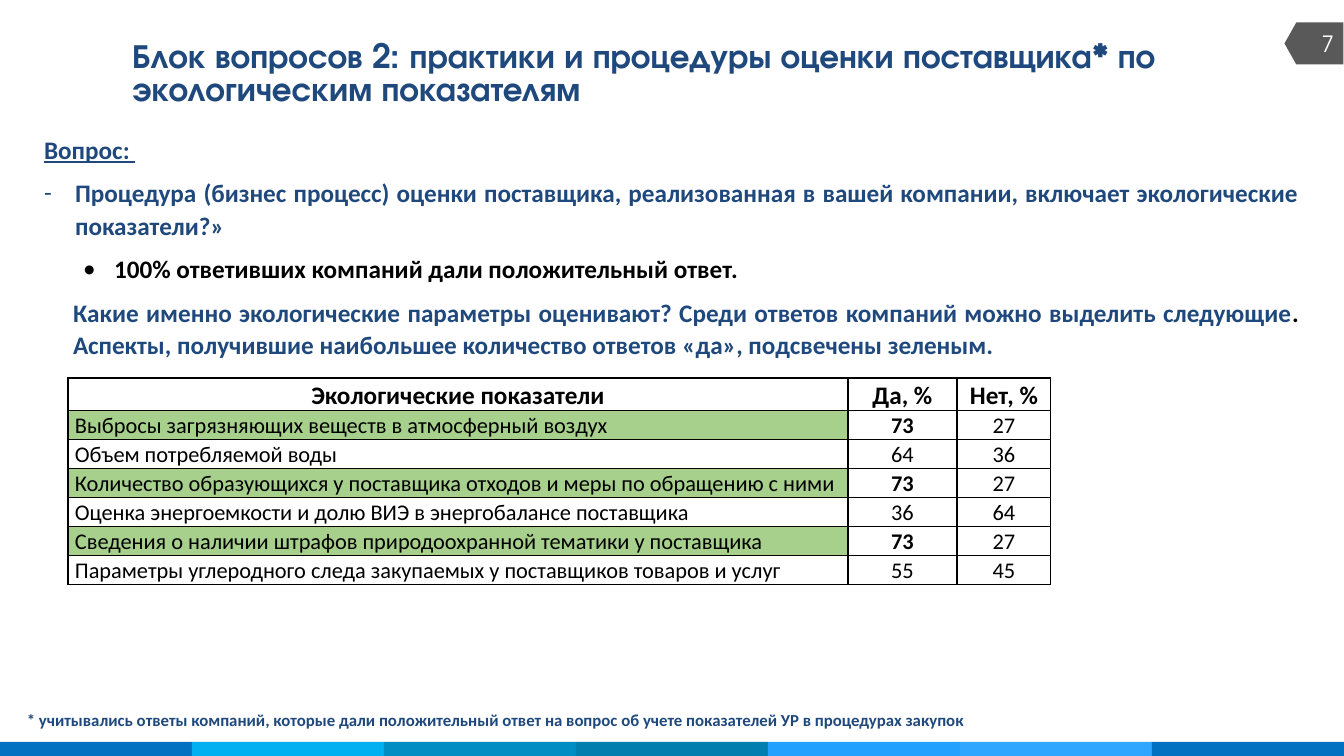
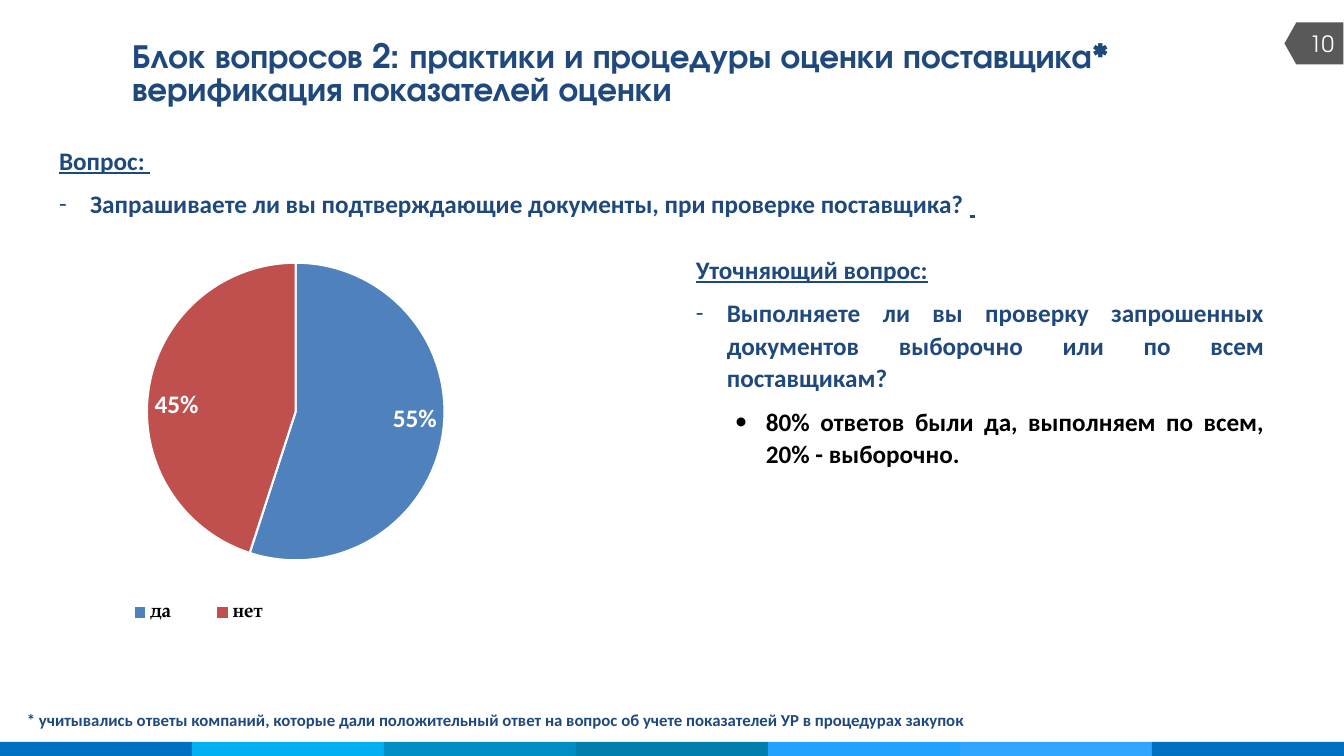
"""Build two survey slides on how suppliers are assessed."""
from lxml import etree
from pptx import Presentation
from pptx import util as u
from pptx.chart.data import CategoryChartData
from pptx.dml.color import RGBColor
from pptx.enum import chart as charts, shapes, text
from pptx.oxml import parse_xml
from pptx.oxml.ns import nsdecls, qn

NAVY = RGBColor(0x1F, 0x49, 0x7D)
BLACK = RGBColor(0, 0, 0)
WHITE = RGBColor(255, 255, 255)
GRAY = RGBColor(0x59, 0x59, 0x59)
GREEN = RGBColor(0xA8, 0xD0, 0x8D)
BLUE = RGBColor(0x4F, 0x81, 0xBD)
RED = RGBColor(0xC0, 0x50, 0x4D)
BANDS = [RGBColor.from_string(code) for code in (
    "0070C0", "00B0F0", "008DC3", "007EAE", "23A1FF", "2FA6FF", "0070C0")]
SANS, GEO, SERIF = "Calibri", "TeX Gyre Adventor", "TeX Gyre Pagella"
WIDE, HIGH = 1344, 756
SCALE = 12192000 / WIDE

HEAD = (0, 0, None)
DASH = (31, -31, "-")
DOT = (70, -31, "•")
PLAIN = (29, 0, None)


def px(*sizes):
    """Turn px lengths into EMU."""
    return [u.Emu(round(size * SCALE)) for size in sizes]


def write(frame, rows, size=18):
    """Fill a frame with (style, run, run...) rows."""
    frame.word_wrap = True
    frame.auto_size = text.MSO_AUTO_SIZE.NONE
    frame.vertical_anchor = text.MSO_ANCHOR.TOP
    for i, ((left, first, mark), *runs) in enumerate(rows):
        para = frame.add_paragraph() if i else frame.paragraphs[0]
        props = para._p.get_or_add_pPr()
        margin, indent = px(left, first)
        props.set("marL", str(margin))
        props.set("indent", str(indent))
        if mark:
            etree.SubElement(props, qn("a:buFont"), typeface=SANS)
            etree.SubElement(props, qn("a:buChar"), char=mark)
        else:
            etree.SubElement(props, qn("a:buNone"))
        para.alignment = text.PP_ALIGN.JUSTIFY
        para.line_spacing = 1.07
        para.space_before, para.space_after = u.Pt(0), u.Pt(8)
        for words, colour, under in runs:
            run = para.add_run()
            run.text = words
            font = run.font
            font.name, font.size, font.bold = SANS, u.Pt(size), True
            font.underline = under
            font.color.rgb = colour


deck = Presentation()
deck.slide_width, deck.slide_height = px(WIDE, HIGH)
layout = deck.slide_layouts[1]
head = layout.placeholders[0]
head.left, head.top, head.width, head.height = px(122, 38, 1101, 52)

pages = [
    ("7", "Блок вопросов 2: практики и процедуры оценки поставщика* "
     "по экологическим показателям", (34, 127, 1275, 245), [
         (HEAD, ("Вопрос: ", NAVY, True)),
         (DASH, ("Процедура (бизнес процесс) оценки поставщика, реализованная "
                 "в вашей компании, включает экологические показатели?»",
                 NAVY, False)),
         (DOT, ("100% ответивших компаний дали положительный ответ.",
                BLACK, False)),
         (PLAIN, ("Какие именно экологические параметры оценивают? Среди "
                  "ответов компаний можно выделить следующие", NAVY, False),
          (". ", BLACK, False),
          ("Аспекты, получившие наибольшее количество ответов «да», "
           "подсвечены зеленым.", NAVY, False))]),
    ("10", "Блок вопросов 2: практики и процедуры оценки поставщика* "
     "верификация показателей оценки", (49, 138, 1275, 95), [
         (HEAD, ("Вопрос: ", NAVY, True)),
         (DASH, ("Запрашиваете ли вы подтверждающие документы, "
                 "при проверке поставщика? ", NAVY, False),
          (" ", NAVY, True))]),
]
note = ("* учитывались ответы компаний, которые дали положительный ответ на "
        "вопрос об учете показателей УР в процедурах закупок")

slides = [deck.slides.add_slide(layout) for page in pages]

step = WIDE // len(BANDS)
parts = [(shapes.MSO_SHAPE.RECTANGLE, (i * step, 742, step, 14), tone, 0)
         for i, tone in enumerate(BANDS)]
parts.append((shapes.MSO_SHAPE.FLOWCHART_OFFPAGE_CONNECTOR,
              (1293, 14, 42, 59), GRAY, 90))
for kind, area, tone, turn in parts:
    part = slides[0].shapes.add_shape(kind, *px(*area))
    part.rotation = turn
    part.shadow.inherit = False
    part.fill.solid()
    part.fill.fore_color.rgb = tone
    part.line.fill.background()
    layout.shapes.element.append(part.element)

for slide, (number, title, area, rows) in zip(slides, pages):
    frame = slide.shapes.title.text_frame
    frame.text = title
    frame.word_wrap = True
    frame.auto_size = text.MSO_AUTO_SIZE.NONE
    frame.vertical_anchor = text.MSO_ANCHOR.TOP
    para = frame.paragraphs[0]
    para.alignment, para.line_spacing = text.PP_ALIGN.LEFT, 0.8
    font = para.runs[0].font
    font.name, font.size, font.bold = GEO, u.Pt(24), True
    font.color.rgb = NAVY

    body = slide.placeholders[1]
    body.left, body.top, body.width, body.height = px(*area)
    write(body.text_frame, rows)

    foot = slide.shapes.add_textbox(*px(17, 703, 1085, 31))
    write(foot.text_frame, [(HEAD, (note, NAVY, False))], 12)

    frame = slide.shapes.add_textbox(*px(1285, 24, 59, 40)).text_frame
    frame.text = number
    frame.word_wrap = True
    frame.vertical_anchor = text.MSO_ANCHOR.MIDDLE
    para = frame.paragraphs[0]
    para.alignment = text.PP_ALIGN.RIGHT
    font = para.runs[0].font
    font.name, font.size = GEO, u.Pt(16)
    font.color.rgb = WHITE

answers = [
    ("Выбросы загрязняющих веществ в атмосферный воздух", 73),
    ("Объем потребляемой воды", 64),
    ("Количество образующихся у поставщика отходов и меры по обращению с ними",
     73),
    ("Оценка энергоемкости и долю ВИЭ в энергобалансе поставщика", 36),
    ("Сведения о наличии штрафов природоохранной тематики у поставщика", 73),
    ("Параметры углеродного следа закупаемых у поставщиков товаров и услуг",
     55),
]
top = max(yes for label, yes in answers)
grid = [("Экологические показатели", "Да, %", "Нет, %")]
grid += [(label, str(yes), str(100 - yes)) for label, yes in answers]
widths = (780, 109, 94)
heights = [32] + [29] * len(answers)
table = slides[0].shapes.add_table(
    len(grid), len(widths),
    *px(68, 378, sum(widths), sum(heights))).table
table.first_row = table.horz_banding = False
for column, width in zip(table.columns, px(*widths)):
    column.width = width
for r, (line, height) in enumerate(zip(grid, px(*heights))):
    table.rows[r].height = height
    best = r > 0 and line[1] == str(top)
    for c, words in enumerate(line):
        cell = table.cell(r, c)
        cell.text = words
        cell.margin_left, cell.margin_right = px(7, 7)
        cell.margin_top = cell.margin_bottom = 0
        para = cell.text_frame.paragraphs[0]
        para.line_spacing = 1.07
        para.alignment = (text.PP_ALIGN.LEFT if r and not c
                          else text.PP_ALIGN.CENTER)
        font = para.runs[0].font
        font.name, font.size = SANS, u.Pt(16 if r else 18)
        font.bold = r == 0 or (best and c == 1)
        font.color.rgb = BLACK
        props = cell._tc.get_or_add_tcPr()
        for side in ("lnL", "lnR", "lnT", "lnB"):
            edge = etree.SubElement(props, qn("a:" + side), w="12700")
            fill = etree.SubElement(edge, qn("a:solidFill"))
            etree.SubElement(fill, qn("a:srgbClr"), val=str(BLACK))
        if best and c == 0:
            cell.fill.solid()
            cell.fill.fore_color.rgb = GREEN
        else:
            cell.fill.background()

data = CategoryChartData(number_format="0%")
data.categories = ["да", "нет"]
data.add_series("Series 1", (0.55, 0.45))
chart = slides[1].shapes.add_chart(
    charts.XL_CHART_TYPE.PIE, *px(24, 246, 647, 414), data).chart
chart.has_title = False
chart.has_legend = True
legend = chart.legend
legend.position = charts.XL_LEGEND_POSITION.BOTTOM
legend.include_in_layout = False
plot = chart.plots[0]
plot.vary_by_categories = True
plot.has_data_labels = True
labels = plot.data_labels
labels.show_value, labels.show_percentage = True, False
labels.number_format, labels.number_format_is_linked = "0%", False
labels.position = charts.XL_LABEL_POSITION.INSIDE_END
for font, name, size, tone in ((chart.font, SANS, 18, BLACK),
                               (legend.font, SERIF, 14, BLACK),
                               (labels.font, SANS, 18, WHITE)):
    font.name, font.size, font.bold = name, u.Pt(size), True
    font.color.rgb = tone
for i, tone in enumerate((BLUE, RED)):
    style = plot.series[0].points[i].format
    style.fill.solid()
    style.fill.fore_color.rgb = tone
    style.line.color.rgb = WHITE
    style.line.width = u.Pt(1.5)

for tag, spot, target, place in (
        ("c:plotArea", 0, '<c:layoutTarget val="inner"/>',
         (0.19, 0.04, 0.46, 0.72)),
        ("c:legend", 1, "", (0.11, 0.85, 0.32, 0.07))):
    owner = chart.element.find(".//" + qn(tag))
    for old in owner.findall(qn("c:layout")):
        owner.remove(old)
    modes = '<c:xMode val="edge"/><c:yMode val="edge"/>'
    sizes = "".join(f'<c:{key} val="{val}"/>' for key, val in zip("xywh", place))
    owner.insert(spot, parse_xml(
        f'<c:layout {nsdecls("c")}><c:manualLayout>{target}{modes}{sizes}'
        '</c:manualLayout></c:layout>'))

side = slides[1].shapes.add_textbox(*px(686, 247, 588, 228))
write(side.text_frame, [
    (HEAD, ("Уточняющий вопрос:", NAVY, True)),
    (DASH, ("Выполняете ли вы проверку запрошенных документов выборочно "
            "или по всем поставщикам?", NAVY, False)),
    (DOT, ("80% ответов были да, выполняем по всем, 20% - выборочно.",
           BLACK, False))])

deck.save("out.pptx")
